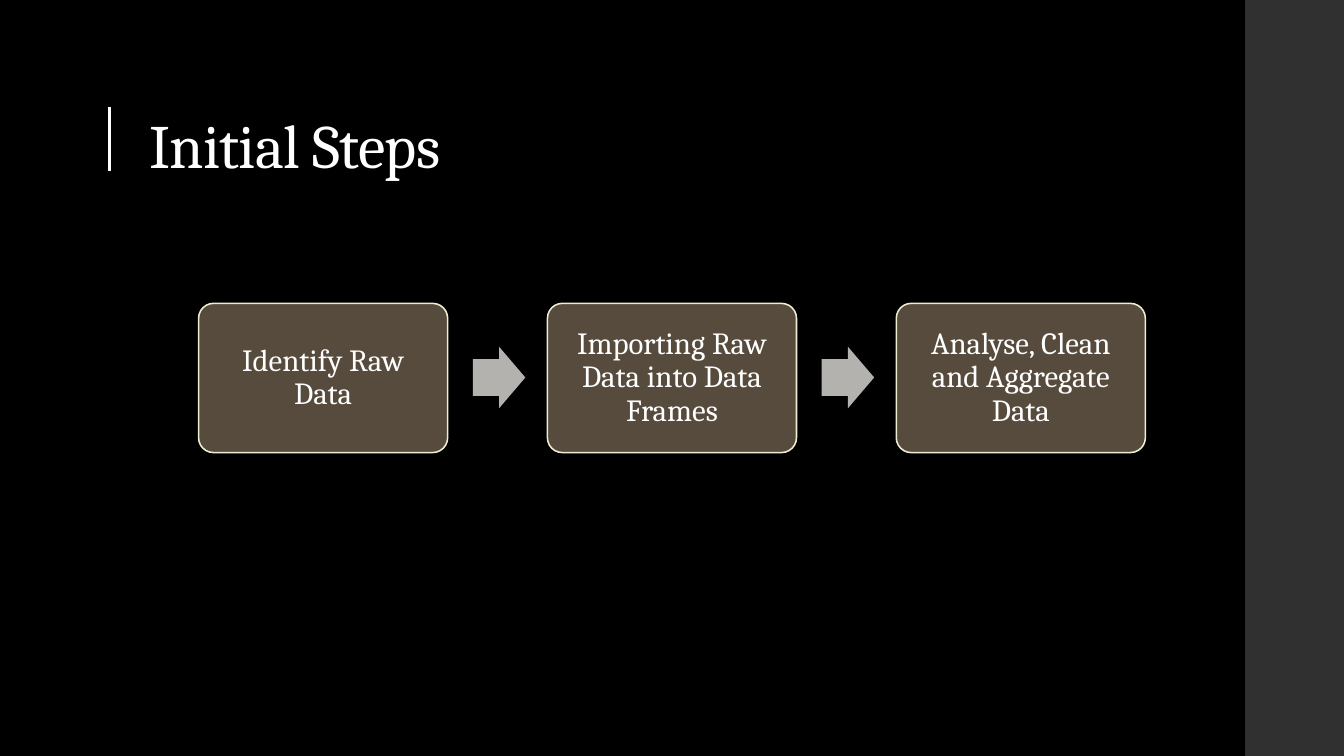
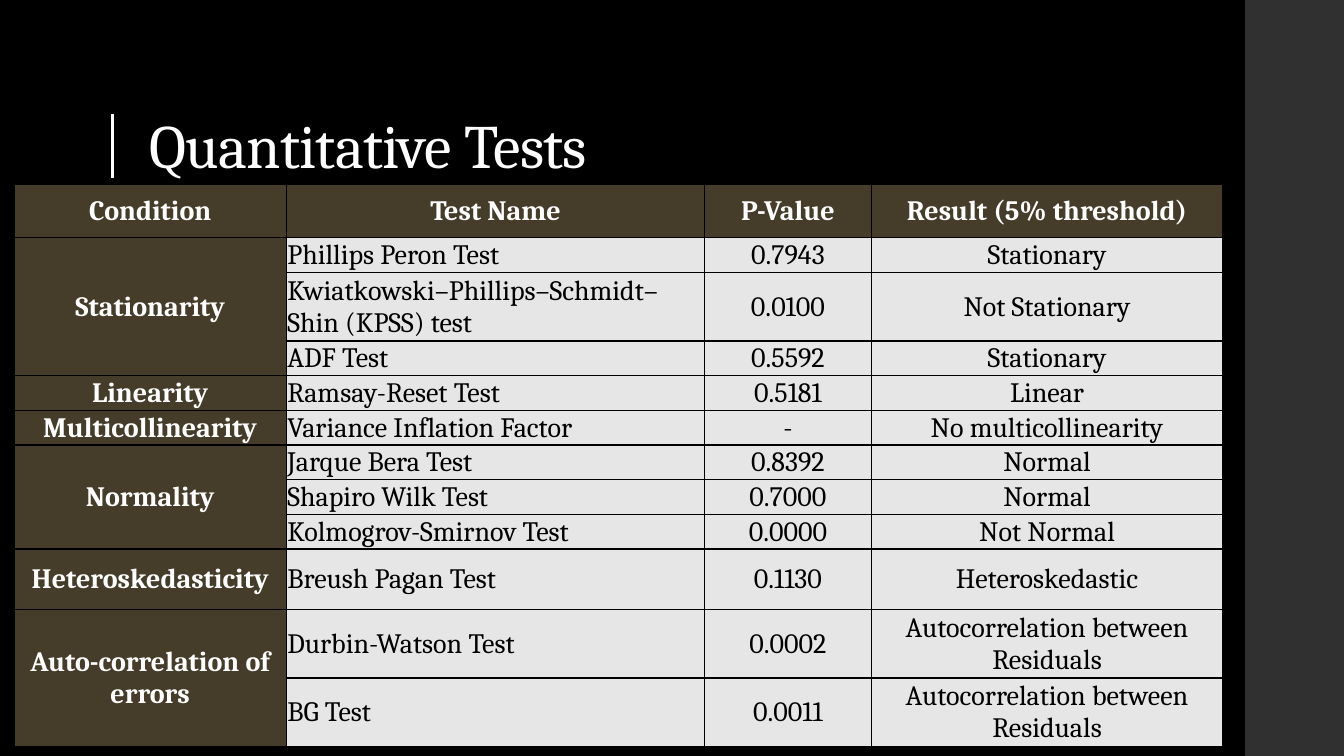
from dataclasses import dataclass
from typing import NamedTuple

from lxml.etree import SubElement
from pptx import Presentation
from pptx.dml.color import RGBColor
from pptx.enum.shapes import MSO_SHAPE
from pptx.enum.text import MSO_ANCHOR, PP_ALIGN
from pptx.oxml import parse_xml
from pptx.oxml.ns import nsdecls, qn
from pptx.presentation import Presentation as Deck
from pptx.shapes.autoshape import Shape
from pptx.slide import Slide
from pptx.table import _Cell as Cell
from pptx.text.text import _Paragraph as Paragraph
from pptx.util import Inches, Pt


@dataclass(frozen=True)
class Theme:
    font: str = "Cambria"
    background: str = "000000"
    band: str = "303030"
    light_text: str = "FFFFFF"
    dark_text: str = "000000"
    step_fill: str = "564B3C"
    step_outline: str = "ECEDD1"
    arrow: str = "B4B2AF"
    label_fill: str = "453C29"
    value_fill: str = "E7E6E6"
    rule: str = "000000"
    title_size: float = 44
    step_size: float = 22
    table_size: float = 20
    outline_width: float = 1.1
    rule_width: float = 1


class Box(NamedTuple):
    left: float
    top: float
    width: float
    height: float


class TestResult(NamedTuple):
    name: str
    p_value: str
    result: str
    height: float


class Condition(NamedTuple):
    name: str
    tests: list[TestResult]


THEME = Theme()

STEPS = [
    "Identify Raw Data",
    "Importing Raw Data into Data Frames",
    "Analyse, Clean and Aggregate Data",
]
FIRST_STEP = Box(1.97, 3.01, 2.47, 1.48)
FIRST_ARROW = Box(4.69, 3.44, 0.52, 0.61)
STEP_PITCH = 3.46

HEADINGS = ["Condition", "Test Name", "P-Value", "Result (5% threshold)"]
COLUMN_WIDTHS = [2.7, 4.15, 1.65, 3.49]
HEADING_HEIGHT = 0.53
LINE = 0.34
CONDITIONS = [
    Condition("Stationarity", [
        TestResult("Phillips Peron Test", "0.7943", "Stationary", LINE),
        TestResult("Kwiatkowski–Phillips–Schmidt–Shin (KPSS) test", "0.0100",
                   "Not Stationary", 2 * LINE),
        TestResult("ADF Test", "0.5592", "Stationary", LINE),
    ]),
    Condition("Linearity", [
        TestResult("Ramsay-Reset Test", "0.5181", "Linear", LINE),
    ]),
    Condition("Multicollinearity", [
        TestResult("Variance Inflation Factor", "-", "No multicollinearity", LINE),
    ]),
    Condition("Normality", [
        TestResult("Jarque Bera Test", "0.8392", "Normal", LINE),
        TestResult("Shapiro Wilk Test", "0.7000", "Normal", LINE),
        TestResult("Kolmogrov-Smirnov Test", "0.0000", "Not Normal", LINE),
    ]),
    Condition("Heteroskedasticity", [
        TestResult("Breush Pagan Test", "0.1130", "Heteroskedastic", 0.6),
    ]),
    Condition("Auto-correlation of errors", [
        TestResult("Durbin-Watson Test", "0.0002",
                   "Autocorrelation between Residuals", 2 * LINE),
        TestResult("BG Test", "0.0011",
                   "Autocorrelation between Residuals", 2 * LINE),
    ]),
]


def rgb(color: str) -> RGBColor:
    return RGBColor.from_string(color)


def style_paragraph(paragraph: Paragraph, size: float, color: str,
                    align: PP_ALIGN, bold: bool = False) -> None:
    paragraph.alignment = align
    paragraph.font.name = THEME.font
    paragraph.font.size = Pt(size)
    paragraph.font.bold = bold
    paragraph.font.color.rgb = rgb(color)


def add_block(slide: Slide, preset: MSO_SHAPE, box: Box, fill: str,
              outline: str | None = None) -> Shape:
    block = slide.shapes.add_shape(preset, *map(Inches, box))
    block.shadow.inherit = False
    block.fill.solid()
    block.fill.fore_color.rgb = rgb(fill)
    if outline is None:
        block.line.fill.background()
    else:
        block.line.color.rgb = rgb(outline)
        block.line.width = Pt(THEME.outline_width)
    return block


def add_titled_slide(deck: Deck, title: str, bar_left: float, bar_top: float) -> Slide:
    slide = deck.slides.add_slide(deck.slide_layouts[6])
    slide.background.fill.solid()
    slide.background.fill.fore_color.rgb = rgb(THEME.background)
    add_block(slide, MSO_SHAPE.RECTANGLE, Box(12.35, 0, 0.98, 7.5), THEME.band)
    heading = slide.shapes.add_textbox(*map(Inches, Box(1.38, 0.4, 10.6, 1.45)))
    frame = heading.text_frame
    frame.word_wrap = True
    frame.vertical_anchor = MSO_ANCHOR.BOTTOM
    paragraph = frame.paragraphs[0]
    paragraph.line_spacing = 0.9
    run = paragraph.add_run()
    run.text = title
    run._r.get_or_add_rPr().set("spc", "-50")
    style_paragraph(paragraph, THEME.title_size, THEME.light_text, PP_ALIGN.LEFT)
    add_block(slide, MSO_SHAPE.RECTANGLE, Box(bar_left, bar_top, 0.05, 0.65),
              THEME.light_text, THEME.rule)
    return slide


def add_step(slide: Slide, text: str, box: Box) -> None:
    step = add_block(slide, MSO_SHAPE.ROUNDED_RECTANGLE, box,
                     THEME.step_fill, THEME.step_outline)
    step.adjustments[0] = 0.1
    frame = step.text_frame
    frame.word_wrap = True
    frame.vertical_anchor = MSO_ANCHOR.MIDDLE
    frame.margin_left = frame.margin_right = Inches(0.13)
    frame.margin_top = frame.margin_bottom = Inches(0.13)
    frame.text = text
    paragraph = frame.paragraphs[0]
    paragraph.line_spacing = 0.9
    style_paragraph(paragraph, THEME.step_size, THEME.light_text, PP_ALIGN.CENTER)


def add_step_flow(slide: Slide) -> None:
    for index, text in enumerate(STEPS):
        shift = index * STEP_PITCH
        add_step(slide, text, FIRST_STEP._replace(left=FIRST_STEP.left + shift))
        if index < len(STEPS) - 1:
            arrow = add_block(slide, MSO_SHAPE.RIGHT_ARROW,
                              FIRST_ARROW._replace(left=FIRST_ARROW.left + shift),
                              THEME.arrow)
            arrow.adjustments[0] = 0.6
            arrow.adjustments[1] = 0.5


def add_cell_rules(cell: Cell) -> None:
    properties = cell._tc.get_or_add_tcPr()
    for position, side in enumerate(("lnL", "lnR", "lnT", "lnB")):
        rule = parse_xml(f'<a:{side} {nsdecls("a")} w="{Pt(THEME.rule_width)}"/>')
        fill = SubElement(rule, qn("a:solidFill"))
        SubElement(fill, qn("a:srgbClr"), val=THEME.rule)
        properties.insert(position, rule)


def fill_cell(cell: Cell, text: str, is_label: bool,
              align: PP_ALIGN = PP_ALIGN.CENTER) -> None:
    cell.text = text
    cell.vertical_anchor = MSO_ANCHOR.MIDDLE
    cell.margin_left = cell.margin_right = cell.margin_top = Inches(0.01)
    cell.margin_bottom = 0
    cell.fill.solid()
    cell.fill.fore_color.rgb = rgb(THEME.label_fill if is_label else THEME.value_fill)
    style_paragraph(cell.text_frame.paragraphs[0], THEME.table_size,
                    THEME.light_text if is_label else THEME.dark_text, align, is_label)


def add_results_table(slide: Slide) -> None:
    heights = [HEADING_HEIGHT] + [test.height for condition in CONDITIONS
                                  for test in condition.tests]
    box = Box(0.14, 1.83, sum(COLUMN_WIDTHS), sum(heights))
    results = slide.shapes.add_table(len(heights), len(HEADINGS),
                                     *map(Inches, box)).table
    results.first_row = results.horz_banding = False
    for column, width in zip(results.columns, COLUMN_WIDTHS):
        column.width = Inches(width)
    for row, height in zip(results.rows, heights):
        row.height = Inches(height)
    for column, heading in enumerate(HEADINGS):
        fill_cell(results.cell(0, column), heading, True)

    first = 1
    for condition in CONDITIONS:
        last = first + len(condition.tests) - 1
        label = results.cell(first, 0)
        fill_cell(label, condition.name, True)
        if last > first:
            label.merge(results.cell(last, 0))
        for row, test in enumerate(condition.tests, first):
            fill_cell(results.cell(row, 1), test.name, False, PP_ALIGN.LEFT)
            fill_cell(results.cell(row, 2), test.p_value, False)
            fill_cell(results.cell(row, 3), test.result, False)
        first = last + 1
    for cell in results.iter_cells():
        add_cell_rules(cell)


def main() -> None:
    deck = Presentation()
    deck.slide_width = Inches(13.33)
    deck.slide_height = Inches(7.5)
    add_step_flow(add_titled_slide(deck, "Initial Steps", 1.06, 1.05))
    add_results_table(add_titled_slide(deck, "Quantitative Tests", 1.09, 1.12))
    deck.save("out.pptx")


if __name__ == "__main__":
    main()
